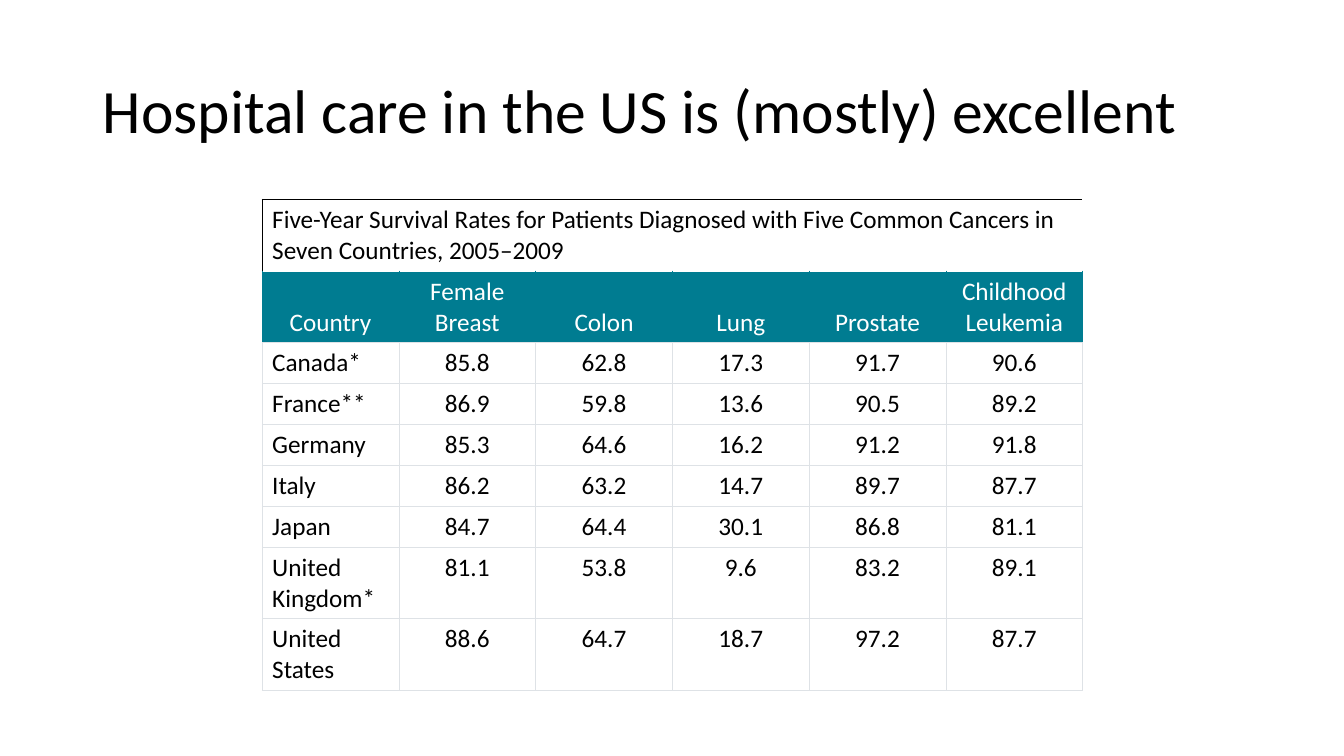
from dataclasses import dataclass

from lxml.etree import SubElement
from pptx import Presentation
from pptx.dml.color import RGBColor
from pptx.enum.text import MSO_ANCHOR, PP_ALIGN
from pptx.oxml.ns import qn
from pptx.slide import Slide
from pptx.table import Table, _Cell
from pptx.util import Inches, Pt

BLACK = RGBColor(0x00, 0x00, 0x00)
WHITE = RGBColor(0xFF, 0xFF, 0xFF)
TEAL = RGBColor(0x00, 0x7C, 0x91)
GREY = RGBColor(0xDE, 0xE2, 0xE6)

FONT = "Calibri"
TITLE = "Hospital care in the US is (mostly) excellent"
CAPTION = (
    "Five-Year Survival Rates for Patients Diagnosed with "
    "Five Common Cancers in Seven Countries, 2005–2009"
)
HEADINGS = ("Country", "Female Breast", "Colon", "Lung", "Prostate", "Childhood Leukemia")
TABLE_WIDTH = 8.14
TALL_ROW = 0.69
SHORT_ROW = 0.4
FIRST_COUNTRY_ROW = 2


@dataclass(frozen=True)
class CountryRates:
    country: str
    rates: tuple[float, ...]
    height: float = SHORT_ROW


@dataclass(frozen=True)
class CellStyle:
    fill: RGBColor
    text: RGBColor
    anchor: MSO_ANCHOR
    borders: dict[str, RGBColor]
    border_width: float = 0.6


COUNTRIES = (
    CountryRates("Canada*", (85.8, 62.8, 17.3, 91.7, 90.6)),
    CountryRates("France**", (86.9, 59.8, 13.6, 90.5, 89.2)),
    CountryRates("Germany", (85.3, 64.6, 16.2, 91.2, 91.8)),
    CountryRates("Italy", (86.2, 63.2, 14.7, 89.7, 87.7)),
    CountryRates("Japan", (84.7, 64.4, 30.1, 86.8, 81.1)),
    CountryRates("United Kingdom*", (81.1, 53.8, 9.6, 83.2, 89.1), TALL_ROW),
    CountryRates("United States", (88.6, 64.7, 18.7, 97.2, 87.7), TALL_ROW),
)

HEADING_STYLE = CellStyle(
    TEAL, WHITE, MSO_ANCHOR.BOTTOM, {"L": TEAL, "R": TEAL, "B": GREY}
)
BODY_STYLE = CellStyle(WHITE, BLACK, MSO_ANCHOR.TOP, dict.fromkeys("LRTB", GREY))


def caption_style(column: int) -> CellStyle:
    sides = "TB"
    if column == 0:
        sides = "LTB"
    elif column == len(HEADINGS) - 1:
        sides = "RTB"
    return CellStyle(WHITE, BLACK, MSO_ANCHOR.MIDDLE, dict.fromkeys(sides, BLACK), 1)


def style_cell(cell: _Cell, style: CellStyle) -> None:
    properties = cell._tc.get_or_add_tcPr()
    for side, color in style.borders.items():
        line = SubElement(properties, qn(f"a:ln{side}"), w=str(Pt(style.border_width)))
        fill = SubElement(line, qn("a:solidFill"))
        SubElement(fill, qn("a:srgbClr"), val=str(color))
    cell.fill.solid()
    cell.fill.fore_color.rgb = style.fill
    cell.vertical_anchor = style.anchor


def write_cell(cell: _Cell, text: str, style: CellStyle, alignment: PP_ALIGN) -> None:
    style_cell(cell, style)
    cell.text = text
    paragraph = cell.text_frame.paragraphs[0]
    paragraph.alignment = alignment
    paragraph.font.name = FONT
    paragraph.font.size = Pt(18)
    paragraph.font.color.rgb = style.text


def add_title(slide: Slide) -> None:
    title = slide.shapes.title
    title.left, title.top = Inches(0.92), Inches(0.4)
    title.width, title.height = Inches(11.5), Inches(1.45)
    title.text_frame.text = TITLE
    title.text_frame.word_wrap = True
    title.text_frame.vertical_anchor = MSO_ANCHOR.MIDDLE
    paragraph = title.text_frame.paragraphs[0]
    paragraph.alignment = PP_ALIGN.LEFT
    paragraph.line_spacing = 0.9
    paragraph.font.name = FONT
    paragraph.font.size = Pt(44)
    paragraph.font.color.rgb = BLACK


def fill_caption(table: Table) -> None:
    last_column = len(HEADINGS) - 1
    table.cell(0, 0).merge(table.cell(0, last_column))
    write_cell(table.cell(0, 0), CAPTION, caption_style(0), PP_ALIGN.LEFT)
    for column in range(1, len(HEADINGS)):
        style_cell(table.cell(0, column), caption_style(column))


def add_survival_table(slide: Slide) -> None:
    heights = [TALL_ROW, TALL_ROW] + [entry.height for entry in COUNTRIES]
    table = slide.shapes.add_table(
        len(heights), len(HEADINGS),
        Inches(2.6), Inches(1.98), Inches(TABLE_WIDTH), Inches(sum(heights)),
    ).table
    table.first_row = False
    table.horz_banding = False
    for row, height in zip(table.rows, heights):
        row.height = Inches(height)

    fill_caption(table)
    for column, heading in enumerate(HEADINGS):
        write_cell(table.cell(1, column), heading, HEADING_STYLE, PP_ALIGN.CENTER)
    for row, entry in enumerate(COUNTRIES, FIRST_COUNTRY_ROW):
        write_cell(table.cell(row, 0), entry.country, BODY_STYLE, PP_ALIGN.LEFT)
        for column, rate in enumerate(entry.rates, 1):
            write_cell(table.cell(row, column), str(rate), BODY_STYLE, PP_ALIGN.CENTER)


def main() -> None:
    presentation = Presentation()
    presentation.slide_width = Inches(13.33)
    presentation.slide_height = Inches(7.5)
    slide = presentation.slides.add_slide(presentation.slide_layouts[5])
    add_title(slide)
    add_survival_table(slide)
    presentation.save("out.pptx")


if __name__ == "__main__":
    main()
